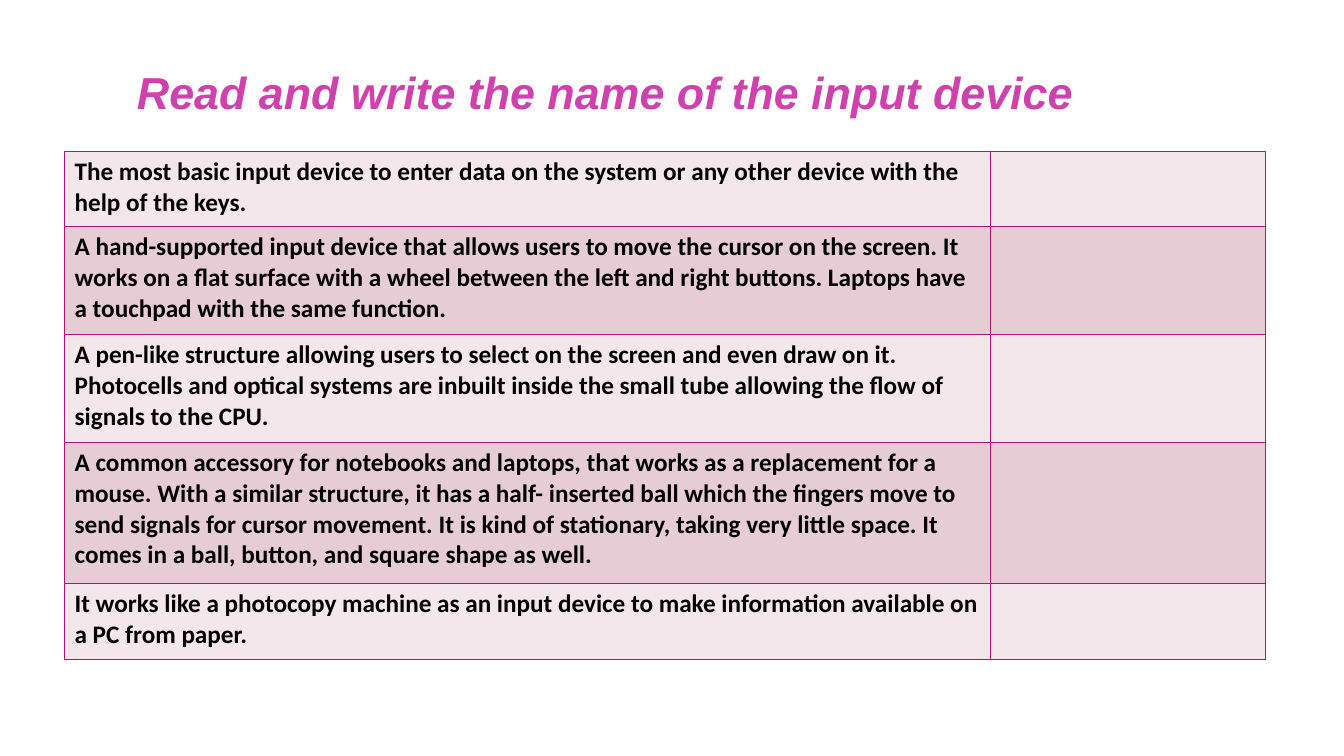
from lxml import etree
from pptx import Presentation
from pptx.dml.color import RGBColor
from pptx.enum.text import MSO_ANCHOR
from pptx.oxml.ns import qn
from pptx.util import Inches, Pt

MIDDLE = MSO_ANCHOR.MIDDLE

TITLE_PINK = RGBColor(0xCF, 0x41, 0xAD)
BORDER_PINK = RGBColor(0xB7, 0x13, 0x73)
BLACK = RGBColor(0x00, 0x00, 0x00)
BAND_COLORS = (RGBColor(0xF3, 0xE7, 0xEB), RGBColor(0xE6, 0xCC, 0xD5))

TITLE_FORMAT = {"name": "Arial", "size": Pt(32), "bold": True, "italic": True}
CLUE_FORMAT = {"name": "Calibri", "size": Pt(18), "bold": True}

# Table grid in inches
TABLE_LEFT, TABLE_TOP = 0.64, 1.5
COLUMN_WIDTHS = (9.18, 2.73)

# Each clue about an input device, with its row height
CLUES = [
    ("The most basic input device to enter data on the system or any other "
     "device with the help of the keys.", 0.75),
    ("A hand-supported input device that allows users to move the cursor on "
     "the screen. It works on a flat surface with a wheel between the left "
     "and right buttons. Laptops have a touchpad with the same function.", 1.07),
    ("A pen-like structure allowing users to select on the screen and even "
     "draw on it. Photocells and optical systems are inbuilt inside the small "
     "tube allowing the flow of signals to the CPU.", 1.07),
    ("A common accessory for notebooks and laptops, that works as a "
     "replacement for a mouse. With a similar structure, it has a half- "
     "inserted ball which the fingers move to send signals for cursor "
     "movement. It is kind of stationary, taking very little space. It comes "
     "in a ball, button, and square shape as well.", 1.4),
    ("It works like a photocopy machine as an input device to make "
     "information available on a PC from paper.", 0.75),
]


def write(text_frame, text, color, font_format):
    paragraph = text_frame.paragraphs[0]
    run = paragraph.add_run()
    run.text = text
    for attribute, value in font_format.items():
        setattr(run.font, attribute, value)
    run.font.color.rgb = color
    return paragraph


def add_title(slide, text):
    box = slide.shapes.add_textbox(Inches(1.26), Inches(0.22), Inches(12.3), Inches(1.45))
    box.text_frame.word_wrap = True
    box.text_frame.vertical_anchor = MIDDLE
    paragraph = write(box.text_frame, text, TITLE_PINK, TITLE_FORMAT)
    paragraph.line_spacing = 0.9


def style_cell(cell, fill_color):
    # Borders come before the fill in the cell properties
    properties = cell._tc.get_or_add_tcPr()
    for side in ("a:lnL", "a:lnR", "a:lnT", "a:lnB"):
        line = etree.SubElement(properties, qn(side), w=str(Pt(1)))
        solid = etree.SubElement(line, qn("a:solidFill"))
        etree.SubElement(solid, qn("a:srgbClr"), val=str(BORDER_PINK))
    cell.fill.solid()
    cell.fill.fore_color.rgb = fill_color


def add_clue_table(slide, clues):
    heights = [height for _, height in clues]
    frame = slide.shapes.add_table(
        len(clues), len(COLUMN_WIDTHS), Inches(TABLE_LEFT), Inches(TABLE_TOP),
        Inches(sum(COLUMN_WIDTHS)), Inches(sum(heights)))
    table = frame.table
    table.first_row = False
    for column, width in zip(table.columns, COLUMN_WIDTHS):
        column.width = Inches(width)
    for index, (row, (clue, height)) in enumerate(zip(table.rows, clues)):
        row.height = Inches(height)
        for cell in row.cells:
            style_cell(cell, BAND_COLORS[index % 2])
        write(row.cells[0].text_frame, clue, BLACK, CLUE_FORMAT)


def main():
    presentation = Presentation()
    presentation.slide_width = Inches(13.33)
    presentation.slide_height = Inches(7.5)
    slide = presentation.slides.add_slide(presentation.slide_layouts[6])
    add_title(slide, "Read and write the name of the input device")
    add_clue_table(slide, CLUES)
    presentation.save("out.pptx")


if __name__ == "__main__":
    main()
